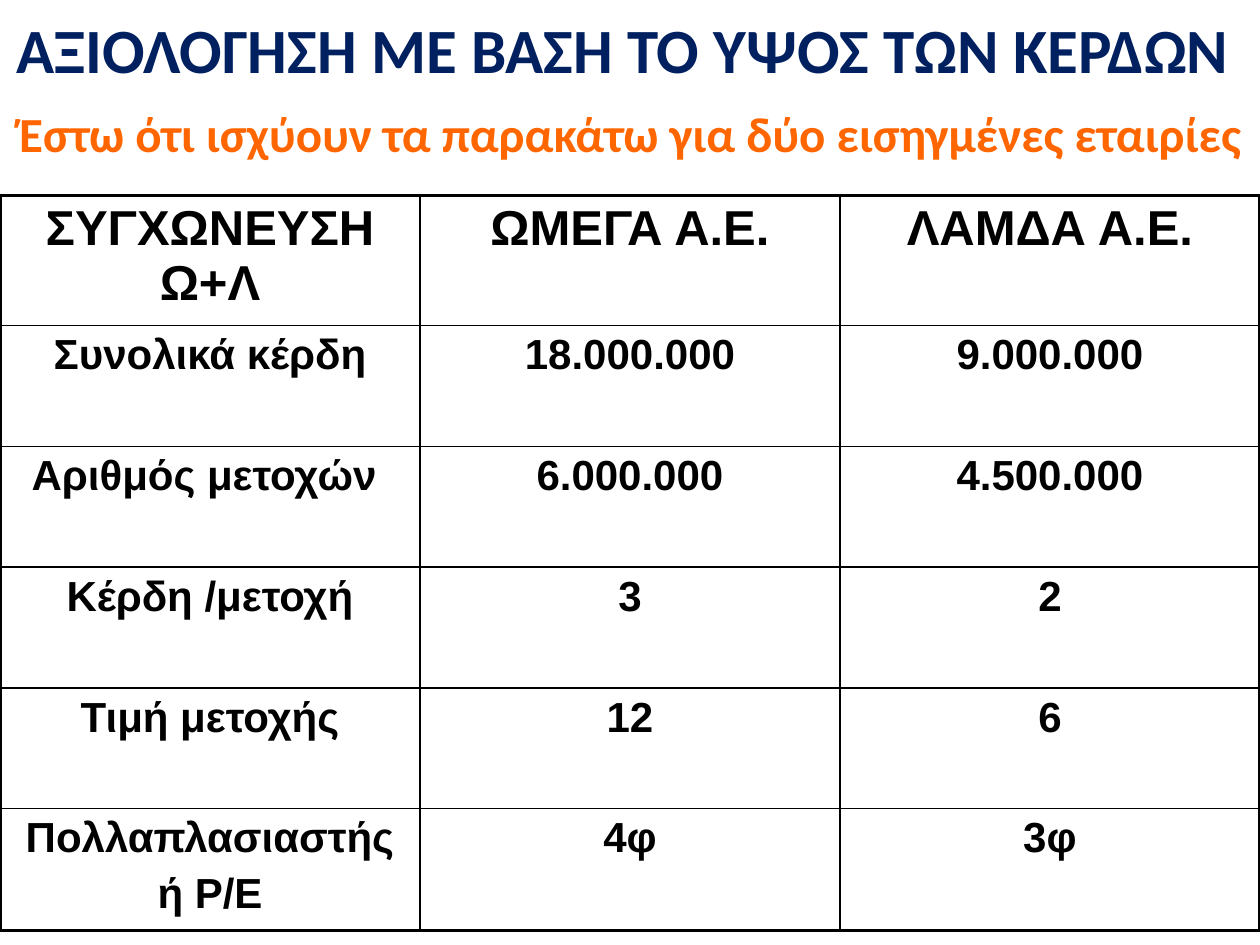
from dataclasses import dataclass

import pptx
import pptx.dml.color
import pptx.enum.text
import pptx.oxml
import pptx.oxml.ns
import pptx.util
from pptx.util import Inches


@dataclass(frozen=True)
class Theme:
    navy: str = "002060"
    orange: str = "FF6600"
    black: str = "000000"
    heading_font: str = "Calibri"
    table_font: str = "Arial"
    title_size: int = 36
    header_size: int = 28
    body_size: int = 24
    outer_line: float = 2.25
    inner_line: float = 1


THEME = Theme()

ROWS = [
    ("ΣΥΓΧΩΝΕΥΣΗ Ω+Λ", "ΩΜΕΓΑ Α.Ε.", "ΛΑΜΔΑ Α.Ε."),
    ("Συνολικά κέρδη", "18.000.000", "9.000.000"),
    ("Αριθμός μετοχών ", "6.000.000", "4.500.000"),
    ("Κέρδη /μετοχή", "3", "2"),
    ("Τιμή μετοχής", "12", "6"),
    ("Πολλαπλασιαστής\nή Ρ/Ε", "4φ", "3φ"),
]


def style_paragraph(paragraph, font_name, size, color):
    paragraph.alignment = pptx.enum.text.PP_ALIGN.CENTER
    paragraph.font.name = font_name
    paragraph.font.size = pptx.util.Pt(size)
    paragraph.font.bold = True
    paragraph.font.color.rgb = pptx.dml.color.RGBColor.from_string(color)


def add_heading(slide, box, text, size, color, anchor):
    shape = slide.shapes.add_textbox(*box)
    frame = shape.text_frame
    frame.word_wrap = True
    frame.vertical_anchor = anchor
    frame.text = text
    paragraph = frame.paragraphs[0]
    paragraph.line_spacing = 1.02
    style_paragraph(paragraph, THEME.heading_font, size, color)


def set_borders(cell, widths):
    """Draw the left, right, top and bottom edges with widths in points."""
    properties = cell._tc.get_or_add_tcPr()
    for position, (side, width) in enumerate(widths.items()):
        line = pptx.oxml.parse_xml(
            f'<a:{side} {pptx.oxml.ns.nsdecls("a")} w="{pptx.util.Pt(width)}">'
            f'<a:solidFill><a:srgbClr val="{THEME.black}"/></a:solidFill></a:{side}>'
        )
        properties.insert(position, line)


def add_comparison_table(slide, box, rows):
    row_count, column_count = len(rows), len(rows[0])
    table = slide.shapes.add_table(row_count, column_count, *box).table
    table.first_row = table.horz_banding = False

    def edge(is_outer):
        return THEME.outer_line if is_outer else THEME.inner_line

    for row_index, row in enumerate(rows):
        size = THEME.header_size if row_index == 0 else THEME.body_size
        for column_index, text in enumerate(row):
            cell = table.cell(row_index, column_index)
            cell.text = text
            cell.margin_left = cell.margin_right = Inches(0.1)
            cell.fill.background()
            for index, paragraph in enumerate(cell.text_frame.paragraphs):
                style_paragraph(paragraph, THEME.table_font, size, THEME.black)
                if index:
                    paragraph.space_before = pptx.util.Pt(size * 0.2)
            set_borders(cell, {
                "lnL": edge(column_index == 0),
                "lnR": edge(column_index == column_count - 1),
                "lnT": edge(row_index == 0),
                "lnB": edge(row_index == row_count - 1),
            })


def main():
    presentation = pptx.Presentation()
    presentation.slide_width = Inches(10)
    presentation.slide_height = Inches(7.5)
    slide = presentation.slides.add_slide(presentation.slide_layouts[6])
    anchors = pptx.enum.text.MSO_ANCHOR

    add_heading(slide, (0, 0, Inches(10), Inches(0.76)),
                "ΑΞΙΟΛΟΓΗΣΗ ΜΕ ΒΑΣΗ ΤΟ ΥΨΟΣ ΤΩΝ ΚΕΡΔΩΝ ",
                THEME.title_size, THEME.navy, anchors.MIDDLE)
    add_heading(slide, (0, Inches(0.76), Inches(10), Inches(0.79)),
                "Έστω ότι ισχύουν τα παρακάτω για δύο εισηγμένες εταιρίες",
                THEME.header_size, THEME.orange, anchors.TOP)
    add_comparison_table(slide, (0, Inches(1.55), Inches(10), Inches(5.75)), ROWS)
    presentation.save("out.pptx")


if __name__ == "__main__":
    main()
